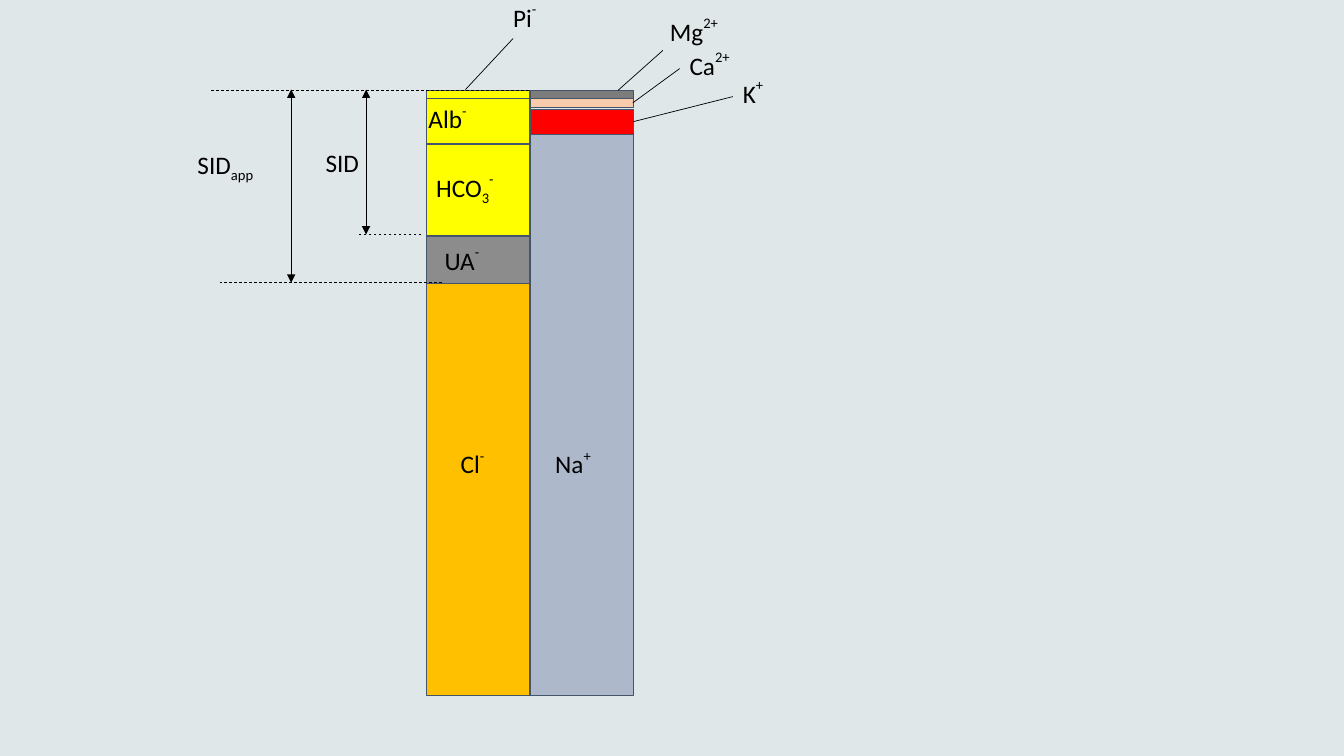
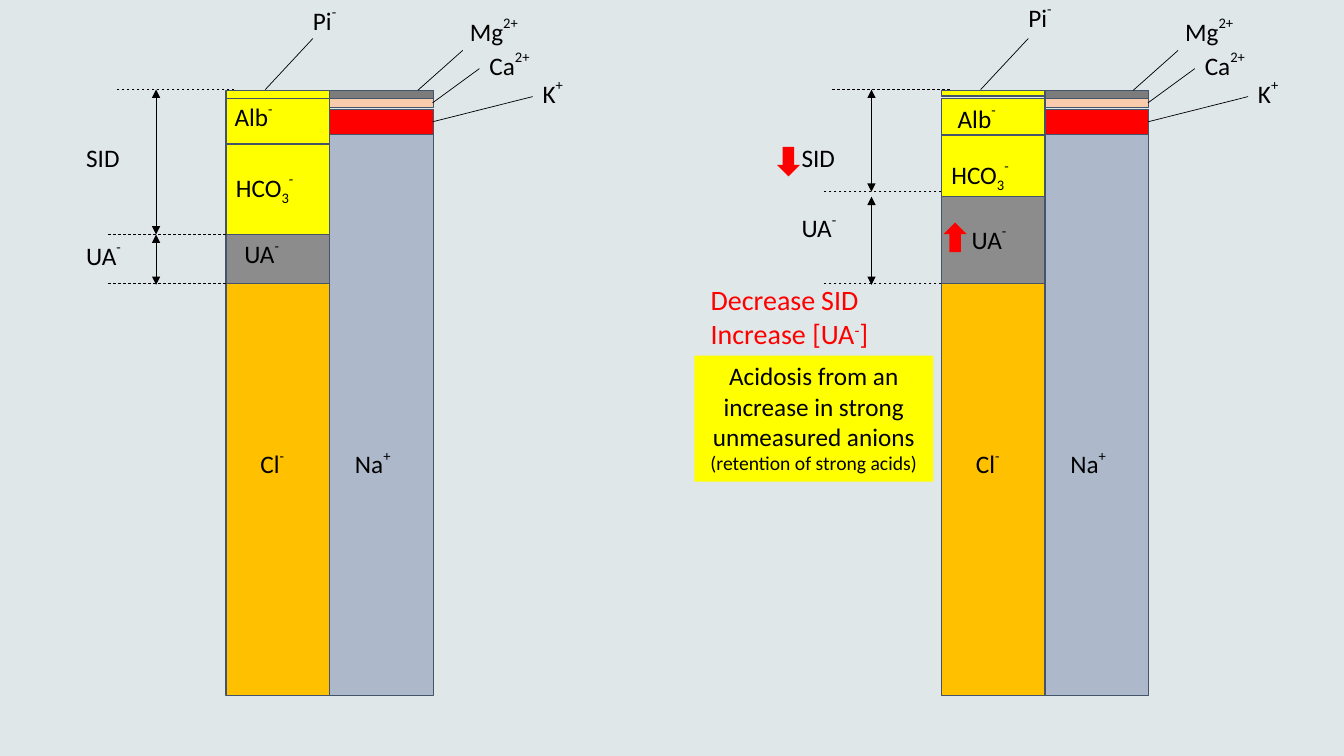
import lxml.etree
import pptx
import pptx.dml.color
import pptx.enum.dml
import pptx.enum.shapes
import pptx.enum.text
import pptx.oxml.ns
import pptx.util

Pt = pptx.util.Pt
RGB = pptx.dml.color.RGBColor
SHAPE = pptx.enum.shapes.MSO_SHAPE
ALIGN = pptx.enum.text.PP_ALIGN
qn = pptx.oxml.ns.qn

PAPER = RGB(0xE0, 0xE7, 0xE8)
EDGE = RGB(0x44, 0x54, 0x6A)
BLACK = RGB(0, 0, 0)
RED = RGB(0xFF, 0, 0)
YELLOW = RGB(0xFF, 0xFF, 0)
ORANGE = RGB(0xFF, 0xC0, 0)
STEEL = RGB(0xAD, 0xB9, 0xCA)
PEACH = RGB(0xF8, 0xCB, 0xAD)
GRAY = RGB(0x8C, 0x8C, 0x8C)
DARK = RGB(0x7C, 0x7C, 0x7C)

UP, DOWN = 50, -25
WIDE = 74
TOP, MEET, BASE = 64.5, 202.5, 497
SID = [("SID",)]
UA = [("UA",), ("-", UP)]
ALB = [("Alb",), ("-", UP)]
HCO = [("HCO",), ("3", DOWN), ("-", UP)]


class Deck:
    """Draw ion columns on slides that share one style."""

    def __init__(self):
        self.prs = pptx.Presentation()
        self.prs.slide_width, self.prs.slide_height = Pt(960), Pt(540)
        fill = self.prs.slide_master.background.fill
        fill.solid()
        fill.fore_color.rgb = PAPER

    def page(self):
        self.slide = self.prs.slides.add_slide(self.prs.slide_layouts[6])

    def shape(self, kind, x, y, w, h, color, edge=None):
        item = self.slide.shapes.add_shape(kind, Pt(x), Pt(y), Pt(w), Pt(h))
        item.shadow.inherit = False
        item.fill.solid()
        item.fill.fore_color.rgb = color
        if edge is None:
            item.line.fill.background()
        else:
            item.line.color.rgb = edge
            item.line.width = Pt(1)
        return item

    def bar(self, x, top, end, color):
        self.shape(SHAPE.RECTANGLE, x, top, WIDE, end - top, color, EDGE)

    def label(self, frame, rows, size=18, color=BLACK, align=ALIGN.LEFT):
        frame.word_wrap = True
        frame.vertical_anchor = pptx.enum.text.MSO_ANCHOR.TOP
        for i, row in enumerate(rows):
            para = frame.add_paragraph() if i else frame.paragraphs[0]
            para.alignment = align
            for text, shift, points in (self.fit(part, size) for part in row):
                run = para.add_run()
                run.text = text
                run.font.name = "Calibri"
                run.font.size = Pt(points)
                run.font.color.rgb = color
                if shift:
                    run.font._element.set("baseline", str(shift * 1000))

    def fit(self, part, size):
        return part + (0, size)[len(part) - 1:]

    def text(self, x, y, *rows, w=80, h=36, **style):
        box = self.slide.shapes.add_textbox(Pt(x), Pt(y), Pt(w), Pt(h))
        self.label(box.text_frame, rows, **style)

    def line(self, x1, y1, x2, y2, dash=False, heads=False):
        item = self.slide.shapes.add_connector(
            pptx.enum.shapes.MSO_CONNECTOR.STRAIGHT, Pt(x1), Pt(y1), Pt(x2), Pt(y2))
        item.line.color.rgb = BLACK
        item.line.width = Pt(0.5)
        if dash:
            item.line.dash_style = pptx.enum.dml.MSO_LINE.DASH
        props = item._element.spPr
        if heads:
            for tag in ("a:headEnd", "a:tailEnd"):
                lxml.etree.SubElement(props.find(qn("a:ln")), qn(tag), type="triangle")
        lxml.etree.SubElement(props, qn("a:effectLst"))

    def stack(self, x, thin, cuts, spots, rise=-3.5):
        """Draw both columns; cuts are the tops of Alb, HCO3 and UA."""
        right = x + WIDE
        for top, end, color in ((96, BASE, STEEL), (78, 96, RED),
                                (69, 77, PEACH), (TOP, 70.5, DARK)):
            self.bar(right, top, end, color)
        self.bar(x, MEET, BASE, ORANGE)
        self.bar(x, TOP, TOP + thin, YELLOW)
        for dx, y, name, sign in ((55, rise, "Pi", "-"), (167, 6.5, "Mg", "2+"),
                                  (181, 31, "Ca", "2+"), (219, 51, "K", "+"),
                                  (85, 315.5, "Na", "+"), (17.5, 315.5, "Cl", "-")):
            self.text(x + dx, y, [(name,), (sign, UP)])
        alb, hco, ua = cuts
        parts = ((ua, MEET, GRAY), (hco, ua, YELLOW), (alb, hco, YELLOW))
        for (top, end, color), (dx, y), name in zip(parts, spots, (UA, HCO, ALB)):
            self.bar(x, top, end, color)
            self.text(x + dx, y, name)
        for x1, y1, x2, y2 in ((169, 36, 137, TOP), (181, 49, 147.5, 73.5),
                               (219, 69, 147.5, 87), (28, 64, 62, 27.5)):
            self.line(x + x1, y1, x + x2, y2)

    def scale(self, x, mid, start, low):
        """Mark the SID and UA spans left of a column."""
        for dx, y in ((0, mid), (6, 64), (0, MEET)):
            self.line(x + dx, y, x + dx - 85, y, dash=True)
        for top, end in ((64, mid), (start, 203.5)):
            self.line(x - 50, top, x - 50, end, heads=True)
        self.text(x - 107, 98, SID)
        self.text(x - 107, low, UA)

    def note(self, x, y, w, h, *rows):
        box = self.shape(SHAPE.RECTANGLE, x, y, w, h, YELLOW)
        self.label(box.text_frame, rows, align=ALIGN.CENTER)

    def arrow(self, x, y, turn=0):
        self.shape(SHAPE.DOWN_ARROW, x, y, 16.5, 21, RED).rotation = turn


def main():
    deck = Deck()
    deck.page()
    deck.stack(304.5, 7, (70.5, 103, 168.5), ((6, 170), (0, 118), (-5.5, 69)))
    for x1, x2, y in ((157, 315.5, 202), (151, 378, TOP), (255, 301, 167.5)):
        deck.line(x2, y, x1, y, dash=True)
    for x, end in ((208, 202), (261.5, 167.5)):
        deck.line(x, 64, x, end, heads=True)
    deck.text(134, 103, SID + [("app", DOWN)], w=77, h=29)
    deck.text(214, 101.5, SID, w=49.5, h=29, align=ALIGN.RIGHT)

    deck.page()
    deck.stack(161.5, 7, (70.5, 103, 167.5), ((6, 165.5), (0, 118), (-1, 67.5)), rise=-1.5)
    deck.scale(161.5, 167.5, 167.5, 166.5)
    deck.stack(672.5, 4, (70.5, 96.5, 140.5), ((14.5, 155), (0, 108.5), (4.5, 68.5)))
    deck.scale(672.5, 137, 140.5, 147)
    deck.note(496, 254, 170.5, 90,
              [("Acidosis from an increase in strong unmeasured anions",)],
              [("(retention of strong acids)", 0, 14)])
    deck.text(500.5, 198.5, [("Decrease",), (" ", 0, 18), ("SID",)],
              [("Increase [UA",), ("-", 30), ("]",)],
              w=140, h=55.5, size=20, color=RED)
    deck.arrow(555, 105)
    deck.arrow(674, 159, turn=180)
    deck.prs.save("out.pptx")


if __name__ == "__main__":
    main()
